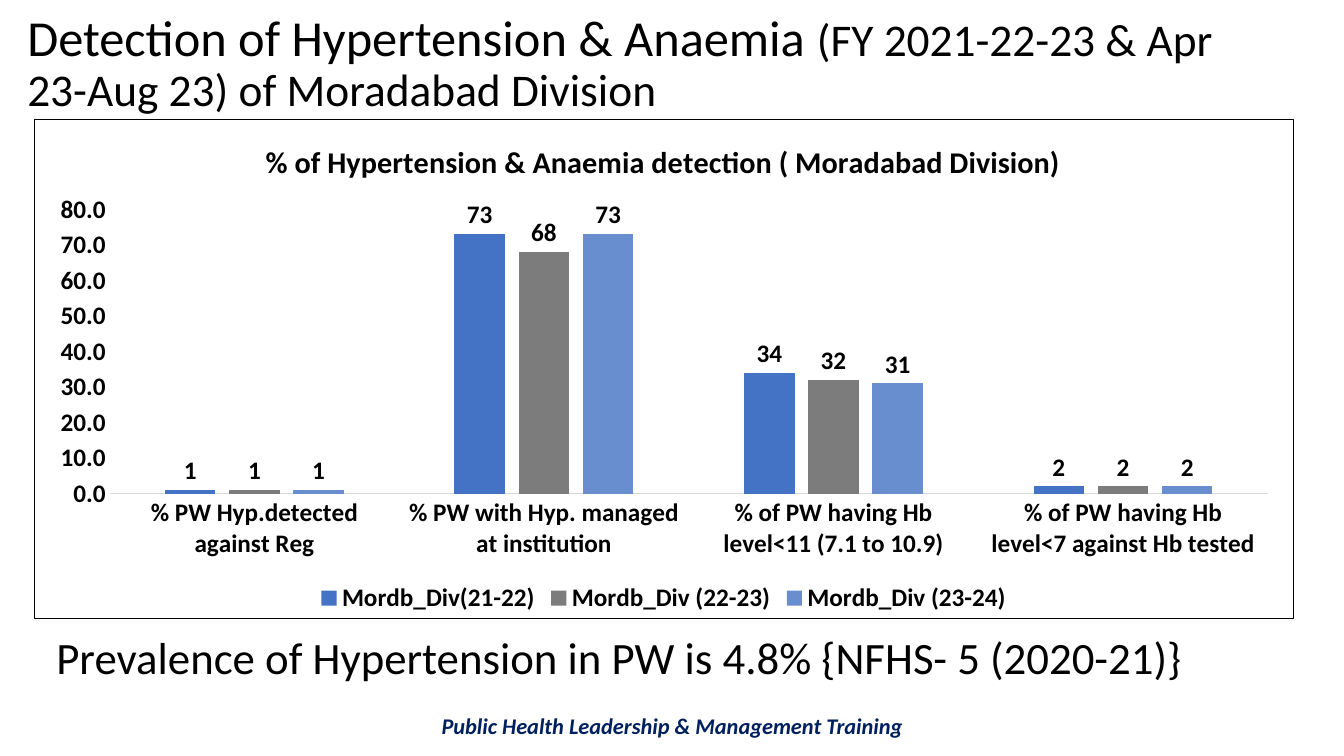
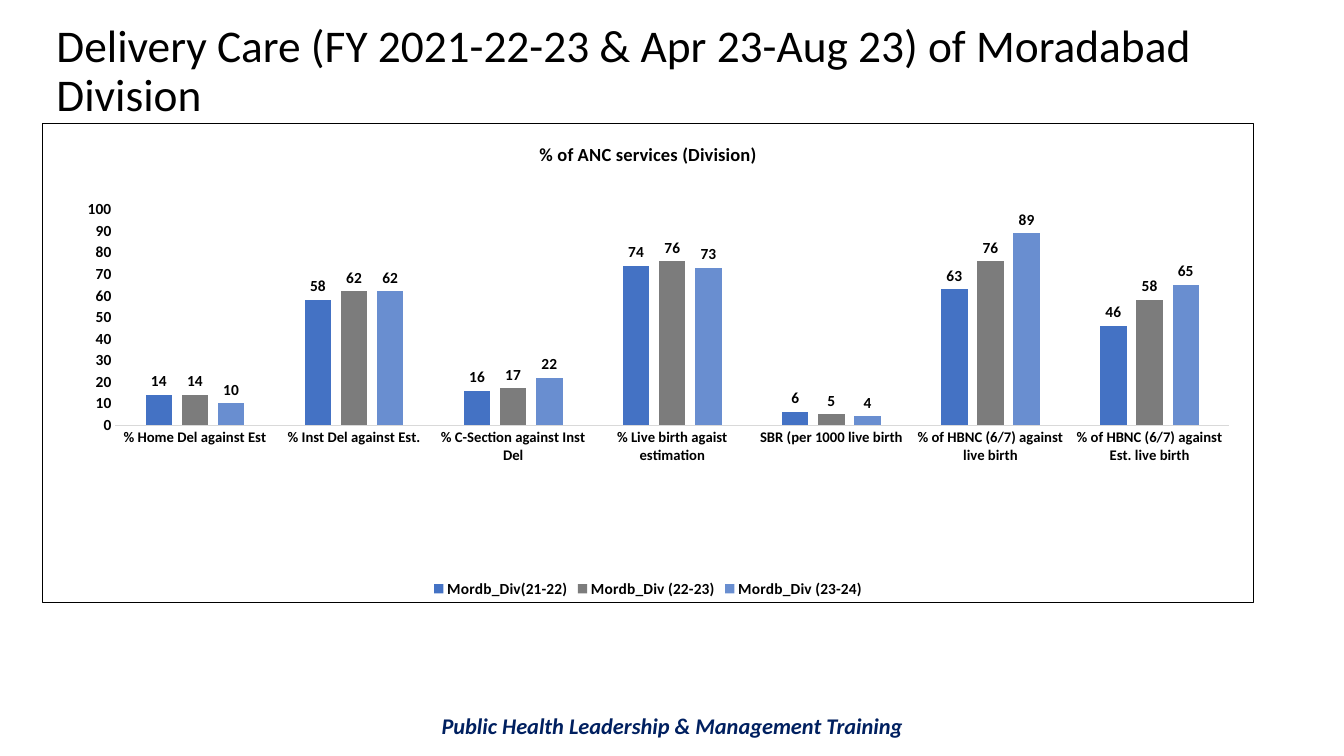
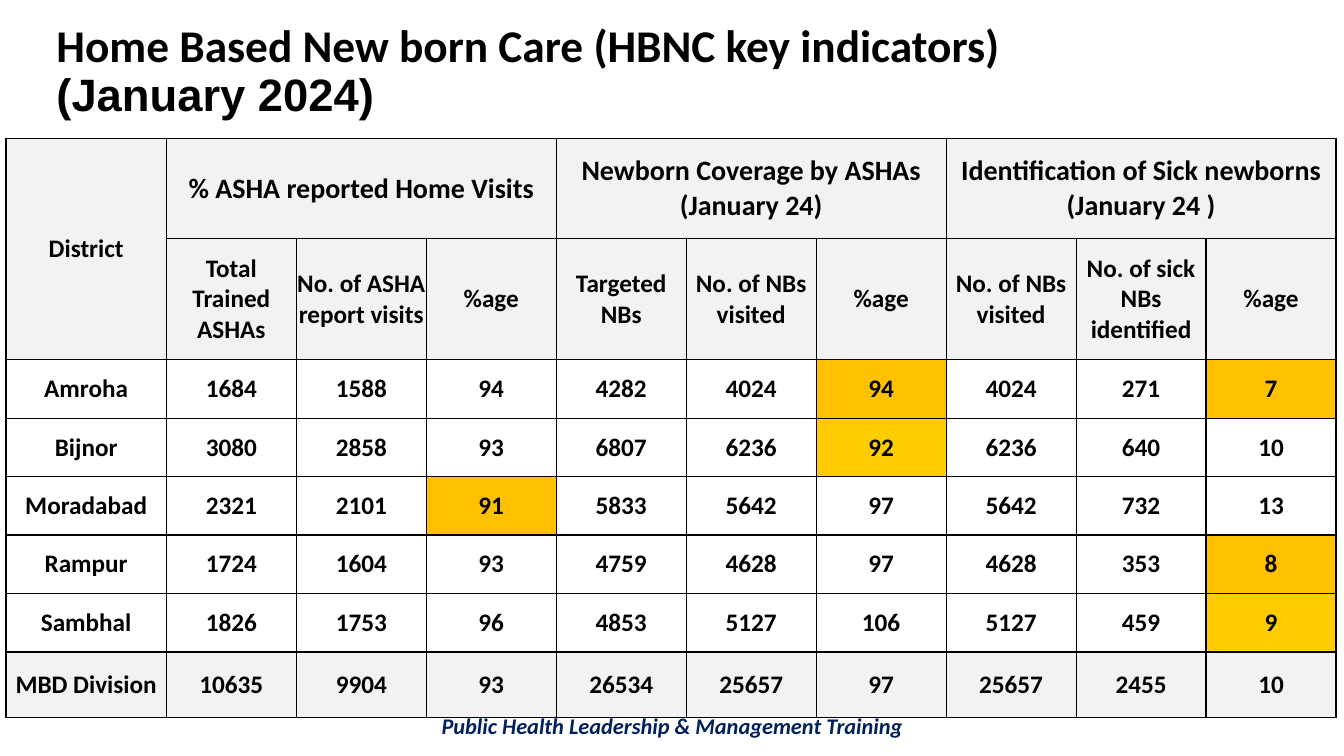
from pptx import Presentation
from pptx import util as u
from pptx.chart import data as chart_data
from pptx.dml import color
from pptx.enum import chart as ch
from pptx.enum import text
from pptx.oxml import ns, xmlchemy

COLORS = {
    "ink": "000000", "navy": "002060", "axis": "D9D9D9", "head": "F2F2F2",
    "amber": "FFC000", "gold": "FFCC00",
}
SERIES_COLORS = ["4472C4", "7C7C7C", "698ED0"]
SERIES_NAMES = ["Mordb_Div(21-22)", "Mordb_Div (22-23)", "Mordb_Div (23-24)"]


def rgb(name):
    return color.RGBColor.from_string(COLORS.get(name, name))


def apply(target, values):
    for name, value in values.items():
        setattr(target, name, value)


def add_element(parent, tag, index=None, **attributes):
    element = xmlchemy.OxmlElement(tag)
    for name, value in attributes.items():
        element.set(name, str(value))
    parent.insert(len(parent) if index is None else index, element)
    return element


def add_line_fill(line, name):
    fill = add_element(line, "a:solidFill")
    add_element(fill, "a:srgbClr", val=COLORS[name])


class SlideBuilder:
    FONT = "Calibri"
    FOOTER = "Public Health Leadership & Management Training"
    COLUMNS = 100
    ROWS = 100

    def __init__(self):
        self.deck = Presentation()
        apply(self.deck, {"slide_width": u.Inches(13.33), "slide_height": u.Inches(7.5)})
        self.page = None

    def across(self, columns):
        return int(self.deck.slide_width * columns / self.COLUMNS)

    def down(self, rows):
        return int(self.deck.slide_height * rows / self.ROWS)

    def area(self, left, top, width, height):
        return self.across(left), self.down(top), self.across(width), self.down(height)

    def font(self, target, size, name=FONT, fill="ink", **values):
        apply(target, {"size": u.Pt(size), "name": name, **values})
        target.color.rgb = rgb(fill)

    def add_spans(self, para, spans):
        for words, values in spans:
            if words == "\n":
                para.add_line_break()
                continue
            span = para.add_run()
            span.text = words
            self.font(span.font, **values)

    def fill_box(self, box, spans, align=text.PP_ALIGN.LEFT, spacing=0.9,
                 anchor=text.MSO_ANCHOR.MIDDLE, fit=text.MSO_AUTO_SIZE.NONE):
        frame = box.text_frame
        apply(frame, {"word_wrap": True, "vertical_anchor": anchor, "auto_size": fit})
        para = frame.paragraphs[0]
        apply(para, {"alignment": align, "line_spacing": spacing})
        self.add_spans(para, spans)

    def new_page(self, spans, area):
        self.page = self.deck.slides.add_slide(self.deck.slide_layouts[5])
        title = self.page.shapes.title
        apply(title, dict(zip(("left", "top", "width", "height"), self.area(*area))))
        self.fill_box(title, spans)
        self.text_box(
            (6.9, 93.6, 86.25, 4.93),
            [(self.FOOTER, {"size": 16, "fill": "navy", "bold": True, "italic": True})],
            align=text.PP_ALIGN.CENTER, spacing=1.0, anchor=text.MSO_ANCHOR.TOP,
            fit=text.MSO_AUTO_SIZE.SHAPE_TO_FIT_TEXT)

    def text_box(self, area, spans, **layout):
        box = self.page.shapes.add_textbox(*self.area(*area))
        self.fill_box(box, spans, **layout)

    def column_chart(self, area, title, categories, rows, top_value, size, category_size,
                     title_size, axis_format, gap, overlap, plot_height):
        data = chart_data.CategoryChartData(number_format="0")
        data.categories = categories
        for name, values in zip(SERIES_NAMES, rows):
            data.add_series(name, values)
        chart = self.page.shapes.add_chart(
            ch.XL_CHART_TYPE.COLUMN_CLUSTERED, *self.area(*area), data).chart
        self.font(chart.font, size, bold=True)
        apply(chart, {"has_title": True, "has_legend": True})
        self.add_spans(chart.chart_title.text_frame.paragraphs[0],
                       [(title, {"size": title_size, "bold": True})])
        apply(chart.legend, {"position": ch.XL_LEGEND_POSITION.BOTTOM,
                             "include_in_layout": False})
        self.font(chart.legend.font, size, bold=True)

        plot = chart.plots[0]
        apply(plot, {"gap_width": gap, "overlap": overlap, "vary_by_categories": False,
                     "has_data_labels": True})
        apply(plot.data_labels, {"show_value": True, "number_format": "0",
                                 "number_format_is_linked": False,
                                 "position": ch.XL_LABEL_POSITION.OUTSIDE_END})
        self.font(plot.data_labels.font, size, bold=True)
        for series, shade in zip(plot.series, SERIES_COLORS):
            series.format.fill.solid()
            series.format.fill.fore_color.rgb = rgb(shade)

        for axis, axis_size in ((chart.category_axis, category_size), (chart.value_axis, size)):
            apply(axis, {"has_major_gridlines": False,
                         "major_tick_mark": ch.XL_TICK_MARK.NONE,
                         "minor_tick_mark": ch.XL_TICK_MARK.NONE})
            self.font(axis.tick_labels.font, axis_size, bold=True)
        category_line = chart.category_axis.format.line
        category_line.width = u.Pt(0.75)
        category_line.color.rgb = rgb("axis")
        apply(chart.value_axis, {"minimum_scale": 0, "maximum_scale": top_value,
                                 "major_unit": 10})
        apply(chart.value_axis.tick_labels, {"number_format": axis_format,
                                             "number_format_is_linked": False})
        chart.value_axis.format.line.fill.background()
        self.place_plot(chart, plot_height)
        self.border_chart(chart)

    def place_plot(self, chart, height):
        plot_area = chart.element.find(".//" + ns.qn("c:plotArea"))
        for old in plot_area.findall(ns.qn("c:layout")):
            plot_area.remove(old)
        manual = add_element(add_element(plot_area, "c:layout", 0), "c:manualLayout")
        settings = {"layoutTarget": "inner", "xMode": "edge", "yMode": "edge",
                    "x": 0.06, "y": 0.18, "w": 0.92, "h": height}
        for name, value in settings.items():
            add_element(manual, "c:" + name, val=value)

    def border_chart(self, chart):
        shape = xmlchemy.OxmlElement("c:spPr")
        chart.element.find(ns.qn("c:chart")).addnext(shape)
        add_element(shape, "a:noFill")
        add_line_fill(add_element(shape, "a:ln", w=u.Pt(0.75)), "ink")

    def table(self, left, top, columns, heights, rows, merges, fills, sizes):
        area = self.area(left, top, sum(columns), sum(heights))
        grid = self.page.shapes.add_table(len(heights), len(columns), *area).table
        apply(grid, {"first_row": False, "horz_banding": False})
        for column, width in zip(grid.columns, columns):
            column.width = self.across(width)
        for row, height in zip(grid.rows, heights):
            row.height = self.down(height)
        for first, last in merges:
            grid.cell(*first).merge(grid.cell(*last))
        for r, row in enumerate(rows):
            for c, words in enumerate(row):
                self.cell(grid.cell(r, c), words, fills.get((r, c)), sizes.get((r, c), 18))

    def cell(self, cell, words, fill, size):
        apply(cell, {"margin_left": 0, "margin_right": 0, "margin_top": 0,
                     "margin_bottom": 0, "vertical_anchor": text.MSO_ANCHOR.MIDDLE})
        if fill:
            cell.fill.solid()
            cell.fill.fore_color.rgb = rgb(fill)
        else:
            cell.fill.background()
        properties = cell._tc.get_or_add_tcPr()
        for index, side in enumerate("LRTB"):
            add_line_fill(add_element(properties, "a:ln" + side, index, w=u.Pt(1)), "ink")
        if words:
            para = cell.text_frame.paragraphs[0]
            para.alignment = text.PP_ALIGN.CENTER
            self.add_spans(para, [(words, {"size": size, "bold": True})])


def hypertension_page(builder):
    builder.new_page(
        [("Detection of Hypertension & Anaemia ", {"size": 36}),
         ("(FY 2021-22-23 & Apr 23-Aug 23) of Moradabad Division", {"size": 32.4})],
        (1.28, 2.27, 93.15, 12.53))
    builder.column_chart(
        (2.5, 15.73, 93.75, 66.13),
        "% of Hypertension & Anaemia detection ( Moradabad Division)",
        ["% PW Hyp.detected against Reg", "% PW with Hyp. managed at institution",
         "% of PW having Hb level<11 (7.1 to 10.9)",
         "% of PW having Hb level<7 against Hb tested"],
        [(1, 73, 34, 2), (1, 68, 32, 2), (1, 73, 31, 2)],
        top_value=80, size=18, category_size=18, title_size=21.6, axis_format="0.0",
        gap=219, overlap=-27, plot_height=0.57)
    builder.text_box(
        (3.45, 81.07, 93.15, 12.53),
        [("Prevalence of Hypertension in PW is 4.8% {NFHS- 5 (2020-21)}", {"size": 32})])


def delivery_page(builder):
    builder.new_page(
        [("Delivery Care (FY 2021-22-23 & Apr 23-Aug 23) of Moradabad Division",
          {"size": 32.4})],
        (3.45, 3.33, 89.7, 12.53))
    builder.column_chart(
        (3.15, 16.27, 90.15, 63.47), "% of ANC services (Division)",
        ["% Home Del against Est", "% Inst Del against Est.", "% C-Section against Inst Del",
         "% Live birth agaist estimation", "SBR (per 1000 live birth",
         "% of HBNC (6/7) against live birth", "% of HBNC (6/7) against Est. live birth"],
        [(14, 58, 16, 74, 6, 63, 46), (14, 62, 17, 76, 5, 76, 58),
         (10, 62, 22, 73, 4, 89, 65)],
        top_value=100, size=11, category_size=10.5, title_size=13.2, axis_format="0",
        gap=229, overlap=-37, plot_height=0.45)


def newborn_page(builder):
    builder.new_page(
        [("Home Based New born Care (HBNC key indicators)", {"size": 32.4, "bold": True}),
         ("\n", {}),
         ("(January 2024)", {"size": 32.4, "bold": True, "name": "Arial"})],
        (3.45, 3.33, 89.7, 12.53))
    rows = [
        ["District", "% ASHA reported Home Visits", "", "",
         "Newborn Coverage by ASHAs (January 24)", "", "",
         "Identification of Sick newborns (January 24 )", "", ""],
        ["", "Total Trained ASHAs", "No. of ASHA report visits", "%age", "Targeted NBs",
         "No. of NBs visited", "%age", "No. of NBs visited", "No. of sick NBs identified",
         "%age"],
        ["Amroha", "1684", "1588", "94", "4282", "4024", "94", "4024", "271", "7"],
        ["Bijnor", "3080", "2858", "93", "6807", "6236", "92", "6236", "640", "10"],
        ["Moradabad", "2321", "2101", "91", "5833", "5642", "97", "5642", "732", "13"],
        ["Rampur", "1724", "1604", "93", "4759", "4628", "97", "4628", "353", "8"],
        ["Sambhal", "1826", "1753", "96", "4853", "5127", "106", "5127", "459", "9"],
        ["MBD Division", "10635", "9904", "93", "26534", "25657", "97", "25657", "2455", "10"],
    ]
    groups = (1, 4, 7)
    fills = {(r, c): "head" for r in (0, 1, 7) for c in range(10)}
    fills.update({(2, 6): "amber", (2, 9): "amber", (3, 6): "gold",
                  (4, 3): "amber", (5, 9): "amber", (6, 9): "gold"})
    builder.table(
        0.45, 18.27, [11.93] + [9.67] * 9, [13.33, 16] + [7.73] * 5 + [8.67], rows,
        merges=[((0, 0), (1, 0))] + [((0, c), (0, c + 2)) for c in groups],
        fills=fills, sizes={(0, c): 20 for c in groups})


def main():
    builder = SlideBuilder()
    for build_page in (hypertension_page, delivery_page, newborn_page):
        build_page(builder)
    builder.deck.save("out.pptx")


if __name__ == "__main__":
    main()
